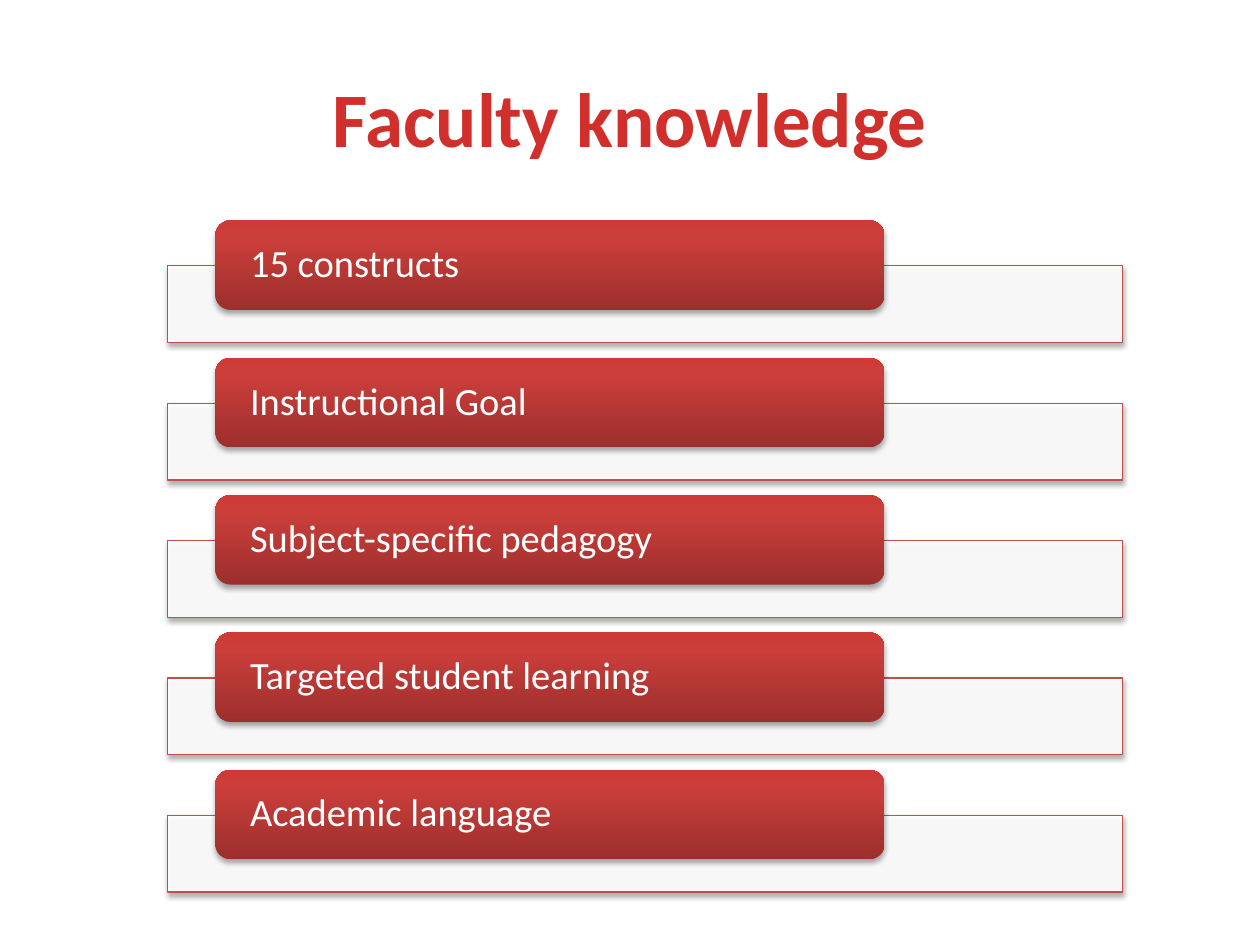
from lxml import etree
from pptx import Presentation
from pptx.dml.color import RGBColor
from pptx.enum.shapes import MSO_SHAPE
from pptx.enum.text import MSO_ANCHOR, PP_ALIGN
from pptx.oxml.ns import qn
from pptx.util import Inches, Pt

RECTANGLE = MSO_SHAPE.RECTANGLE
ROUNDED = MSO_SHAPE.ROUNDED_RECTANGLE
MIDDLE = MSO_ANCHOR.MIDDLE
LEFT, CENTER = PP_ALIGN.LEFT, PP_ALIGN.CENTER

FONT = "Calibri"
COLORS = {
    "white": "FFFFFF", "black": "000000", "outline": "C0504D",
    "title_light": "FC7C7A", "title_red": "D02F2C", "title_deep": "C70500",
    "pill_dark": "9C2F2D", "pill_red": "CB3E3A", "pill_light": "CE3B37",
}
# Gradient stops: percent along the gradient, colour name
TITLE_STOPS = [(0, "title_light"), (75, "title_red"), (100, "title_deep")]
PILL_STOPS = [(0, "pill_dark"), (80, "pill_red"), (100, "pill_light")]

TOPICS = [
    "15 constructs",
    "Instructional Goal",
    "Subject-specific pedagogy",
    "Targeted student learning",
    "Academic language",
]
FIRST_TOP = 1.75
ROW_STEP = 1.09
BAR_DROP = 0.36  # from the top of a pill to the top of its bar


def color(name):
    return RGBColor.from_string(COLORS[name])


def add_color(parent, name, alpha=None):
    element = etree.SubElement(parent, qn("a:srgbClr"), val=COLORS[name])
    if alpha is not None:
        etree.SubElement(element, qn("a:alpha"), val=str(alpha * 1000))


def set_gradient(fill, owner, stops, angle):
    """Give the fill held by the owner element a linear gradient."""
    fill.gradient()
    gradient = owner.find(qn("a:gradFill"))
    for child in list(gradient):
        gradient.remove(child)
    stop_list = etree.SubElement(gradient, qn("a:gsLst"))
    for percent, name in stops:
        stop = etree.SubElement(stop_list, qn("a:gs"), pos=str(percent * 1000))
        add_color(stop, name)
    etree.SubElement(gradient, qn("a:lin"), ang=str(angle * 60000), scaled="0")


def set_shadow(shape):
    shape.shadow.inherit = False
    effects = shape._element.spPr.find(qn("a:effectLst"))
    shadow = etree.SubElement(
        effects, qn("a:outerShdw"), blurRad=str(Pt(3.1)), dist=str(Pt(1.8)),
        dir=str(90 * 60000), rotWithShape="0")
    add_color(shadow, "black", alpha=35)


def write_text(shape, text, size, align=LEFT, bold=False, side_inset=0.1,
               end_inset=0.05, line_spacing=1.0):
    """Write one middle-anchored line and return its span."""
    frame = shape.text_frame
    frame.word_wrap = True
    frame.vertical_anchor = MIDDLE
    frame.margin_left = frame.margin_right = Inches(side_inset)
    frame.margin_top = frame.margin_bottom = Inches(end_inset)
    para = frame.paragraphs[0]
    para.alignment = align
    para.line_spacing = line_spacing
    span = para.add_run()
    span.text = text
    span.font.name = FONT
    span.font.size = Pt(size)
    span.font.bold = bold
    return span


def add_title(page, text):
    box = page.shapes.add_textbox(
        Inches(0.5), Inches(0.3), Inches(9), Inches(1.25))
    span = write_text(box, text, size=44, align=CENTER, bold=True)
    set_gradient(span.font.fill, span._r.get_or_add_rPr(), TITLE_STOPS, 90)


def add_bar(group, top):
    bar = group.shapes.add_shape(
        RECTANGLE, Inches(1.33), Inches(top), Inches(7.58), Inches(0.61))
    bar.fill.solid()
    bar.fill.fore_color.rgb = color("white")
    tint = bar._element.spPr.find(qn("a:solidFill"))[0]
    etree.SubElement(tint, qn("a:alpha"), val="90000")
    bar.line.color.rgb = color("outline")
    bar.line.width = Pt(0.75)
    set_shadow(bar)


def add_pill(group, top, text):
    pill = group.shapes.add_shape(
        ROUNDED, Inches(1.71), Inches(top), Inches(5.31), Inches(0.71))
    set_gradient(pill.fill, pill._element.spPr, PILL_STOPS, 270)
    pill.line.fill.background()
    set_shadow(pill)
    span = write_text(pill, text, size=22, side_inset=0.24, end_inset=0.03,
                      line_spacing=0.9)
    span.font.color.rgb = color("white")


def main():
    deck = Presentation()
    deck.slide_width, deck.slide_height = Inches(10), Inches(7.5)
    page = deck.slides.add_slide(deck.slide_layouts[6])

    add_title(page, "Faculty knowledge")

    # Topic list: each pill overlaps the bar behind it
    group = page.shapes.add_group_shape()
    for row, topic in enumerate(TOPICS):
        top = FIRST_TOP + row * ROW_STEP
        add_bar(group, top + BAR_DROP)
        add_pill(group, top, topic)

    deck.save("out.pptx")


if __name__ == "__main__":
    main()
